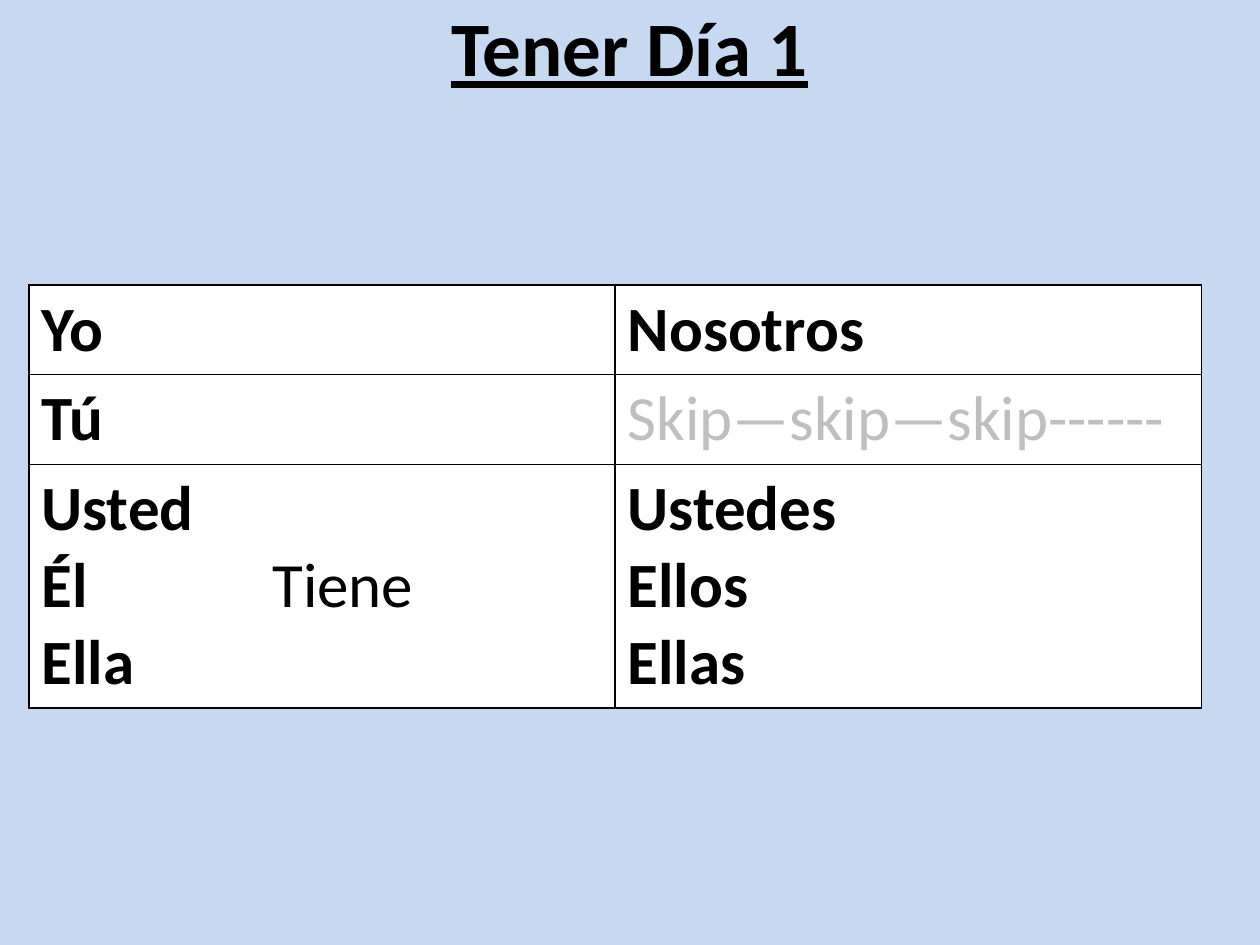
from dataclasses import dataclass

from lxml.etree import SubElement
from pptx import Presentation
from pptx.dml.color import RGBColor
from pptx.enum.text import MSO_ANCHOR, PP_ALIGN
from pptx.oxml.ns import qn
from pptx.util import Pt

BLACK = RGBColor(0x00, 0x00, 0x00)
GREY = RGBColor(0xBF, 0xBF, 0xBF)
WHITE = RGBColor(0xFF, 0xFF, 0xFF)
SKY = RGBColor(0xC6, 0xD9, 0xF1)

TITLE_FORMAT = {"name": "Calibri", "size": Pt(44), "bold": True, "underline": True}
CELL_FORMAT = {"name": "Calibri", "size": Pt(36)}
CELL_MARGINS = {"margin_left": Pt(7.2), "margin_right": Pt(7.2),
                "margin_top": Pt(3.6), "margin_bottom": Pt(3.6)}
COLUMN_WIDTH = Pt(335)
ROW_HEIGHTS = (Pt(51), Pt(51), Pt(139))
VERB_TAB = Pt(132)


@dataclass(frozen=True)
class Line:
    pronoun: str
    verb: str = ""
    bold: bool = True
    color: RGBColor = BLACK


CONJUGATION = (
    ((Line("Yo"),), (Line("Nosotros"),)),
    ((Line("Tú"),), (Line("Skip—skip—skip------", bold=False, color=GREY),)),
    ((Line("Usted"), Line("Él", verb="Tiene"), Line("Ella")),
     (Line("Ustedes"), Line("Ellos"), Line("Ellas"))),
)


def set_attributes(target, values: dict) -> None:
    for name, value in values.items():
        setattr(target, name, value)


def add_span(para, text: str, bold: bool, color: RGBColor) -> None:
    span = para.add_run()
    span.text = text
    set_attributes(span.font, CELL_FORMAT | {"bold": bold})
    span.font.color.rgb = color


def add_tab_stop(para, position: int) -> None:
    tabs = SubElement(para._p.get_or_add_pPr(), qn("a:tabLst"))
    SubElement(tabs, qn("a:tab"), pos=str(position), algn="l")


def add_borders(cell, color: RGBColor, width: int) -> None:
    """Outline a cell; its fill must be set afterwards to keep the XML order."""
    properties = cell._tc.get_or_add_tcPr()
    for side in ("lnL", "lnR", "lnT", "lnB"):
        border = SubElement(properties, qn(f"a:{side}"), w=str(width))
        fill = SubElement(border, qn("a:solidFill"))
        SubElement(fill, qn("a:srgbClr"), val=str(color))


def fill_cell(cell, lines: tuple[Line, ...]) -> None:
    set_attributes(cell, CELL_MARGINS)
    add_borders(cell, BLACK, Pt(1))
    cell.fill.solid()
    cell.fill.fore_color.rgb = WHITE
    frame = cell.text_frame
    for index, line in enumerate(lines):
        para = frame.add_paragraph() if index else frame.paragraphs[0]
        add_span(para, line.pronoun, line.bold, line.color)
        if line.verb:
            add_tab_stop(para, VERB_TAB)
            add_span(para, f"\t{line.verb}", False, line.color)


def add_title(page, text: str) -> None:
    title = page.shapes.title
    set_attributes(title, {"left": Pt(0), "top": Pt(-22.5),
                           "width": Pt(720), "height": Pt(97.5)})
    title.text_frame.vertical_anchor = MSO_ANCHOR.MIDDLE
    para = title.text_frame.paragraphs[0]
    para.alignment = PP_ALIGN.CENTER
    span = para.add_run()
    span.text = text
    set_attributes(span.font, TITLE_FORMAT)
    span.font.color.rgb = BLACK


def add_conjugation_table(page) -> None:
    table = page.shapes.add_table(
        len(CONJUGATION), len(CONJUGATION[0]), Pt(16.5), Pt(162.75),
        COLUMN_WIDTH * len(CONJUGATION[0]), sum(ROW_HEIGHTS)).table
    for column in table.columns:
        column.width = COLUMN_WIDTH
    for row, height, contents in zip(table.rows, ROW_HEIGHTS, CONJUGATION):
        row.height = height
        for cell, lines in zip(row.cells, contents):
            fill_cell(cell, lines)


def main() -> None:
    deck = Presentation()
    deck.slide_width, deck.slide_height = Pt(720), Pt(540)
    page = deck.slides.add_slide(deck.slide_layouts[5])
    page.background.fill.solid()
    page.background.fill.fore_color.rgb = SKY
    add_title(page, "Tener Día 1")
    add_conjugation_table(page)
    deck.save("out.pptx")


if __name__ == "__main__":
    main()
